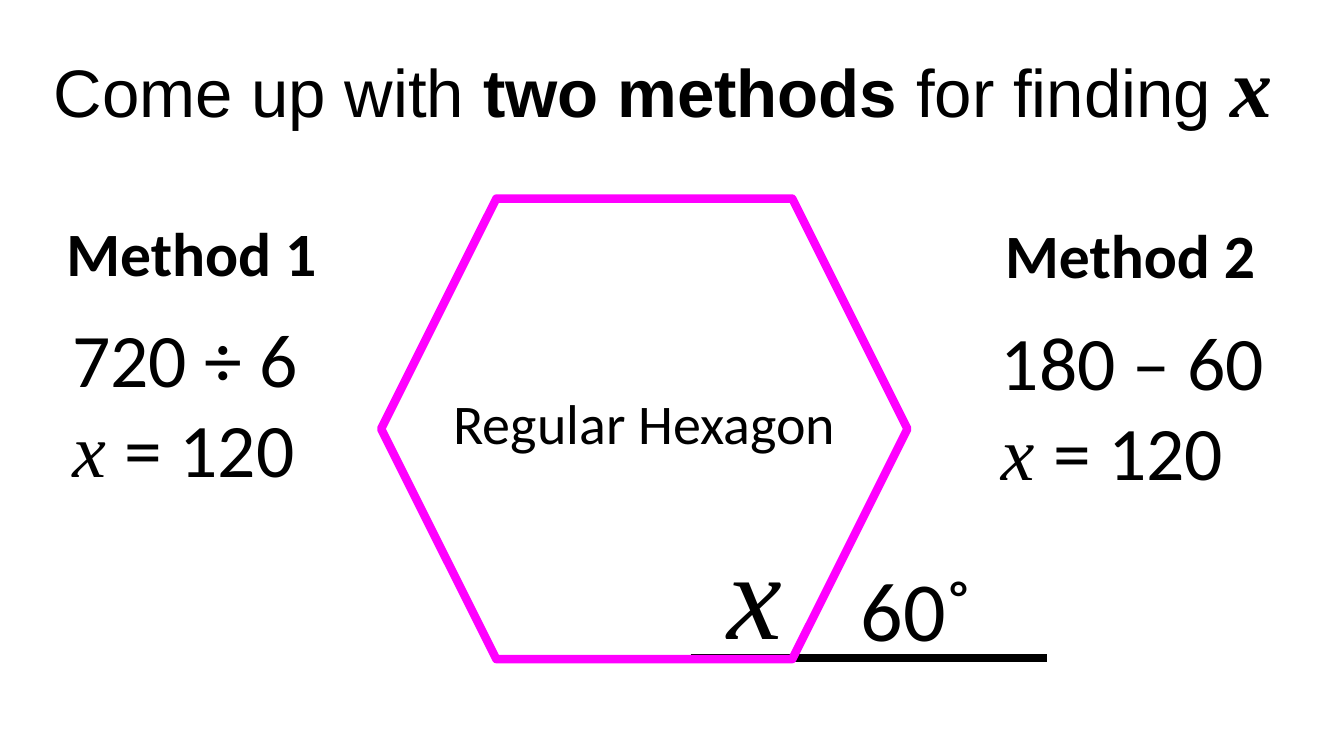
from lxml import etree
from pptx import Presentation
from pptx.dml.color import RGBColor
from pptx.enum.shapes import MSO_CONNECTOR, MSO_SHAPE
from pptx.enum.text import MSO_ANCHOR, MSO_AUTO_SIZE, PP_ALIGN
from pptx.oxml.ns import qn
from pptx.util import Inches, Pt

LEFT, CENTER = PP_ALIGN.LEFT, PP_ALIGN.CENTER
STRAIGHT = MSO_CONNECTOR.STRAIGHT
HEXAGON = MSO_SHAPE.HEXAGON
TOP = MSO_ANCHOR.TOP
NO_AUTOFIT = MSO_AUTO_SIZE.NONE

COLORS = {"ink": "000000", "hexagon": "FF00FF"}
SANS, BODY, MATH = "Arial", "Calibri", "Times New Roman"

# Content: each run is (text, font, size, bold, italic)
TITLE_BOX = (0.26, 0.28, 12.63, 1.11)
TITLE = [[
    ("Come up with ", SANS, 48, False, False),
    ("two methods ", SANS, 48, True, False),
    ("for finding ", SANS, 48, False, False),
    ("x", MATH, 60, True, True),
]]
HEXAGON_BOX = (3.78, 1.97, 5.22, 4.57)
BASELINE = (6.85, 6.53, 10.38, 6.53)
FIGURE_LABELS = [
    ((8.33, 5.48, 1.53, 1.11), ("60˚", BODY, 60, False, False)),
    ((6.75, 5.07, 1.47, 1.58), ("x", MATH, 88, False, True)),
    ((4.35, 3.81, 4.08, 0.77), ("Regular Hexagon", BODY, 40, False, False)),
]
# Heading, heading box, working, working box
METHODS = [
    ("Method 1", (0.26, 2.08, 3.28, 0.84), "720 ÷ 6", (0.62, 3.04, 2.65, 1.92)),
    ("Method 2", (9.57, 2.1, 3.28, 0.84), "180 – 60", (9.83, 3.07, 3, 1.92)),
]
ANSWER = [("x ", MATH, 54, False, True), ("= 120", BODY, 54, False, False)]


def color(name):
    return RGBColor.from_string(COLORS[name])


def write(frame, lines, align):
    frame.word_wrap = True
    frame.auto_size = NO_AUTOFIT
    frame.vertical_anchor = TOP
    frame.text = "\n".join("" for _ in lines)
    for paragraph, runs in zip(frame.paragraphs, lines):
        paragraph.alignment = align
        for text, font, size, bold, italic in runs:
            run = paragraph.add_run()
            run.text = text
            run.font.name = font
            run.font.size = Pt(size)
            run.font.bold = bold
            run.font.italic = italic
            run.font.color.rgb = color("ink")


def add_label(slide, box, lines, align=CENTER):
    label = slide.shapes.add_textbox(*map(Inches, box))
    write(label.text_frame, lines, align)


def main():
    prs = Presentation()
    prs.slide_width, prs.slide_height = Inches(13.33), Inches(7.5)
    slide = prs.slides.add_slide(prs.slide_layouts[5])

    # Title
    title = slide.shapes.title
    title.left, title.top, title.width, title.height = map(Inches, TITLE_BOX)
    write(title.text_frame, TITLE, CENTER)

    # Extended base line, behind the hexagon
    baseline = slide.shapes.add_connector(STRAIGHT, *map(Inches, BASELINE))
    baseline.line.color.rgb = color("ink")
    baseline.line.width = Pt(6)
    etree.SubElement(baseline._element.spPr, qn("a:effectLst"))

    # Hexagon and its labels
    hexagon = slide.shapes.add_shape(HEXAGON, *map(Inches, HEXAGON_BOX))
    hexagon.shadow.inherit = False
    hexagon.fill.background()
    hexagon.line.color.rgb = color("hexagon")
    hexagon.line.width = Pt(6)
    for box, run in FIGURE_LABELS:
        add_label(slide, box, [[run]])

    # The two methods
    for heading, heading_box, working, working_box in METHODS:
        add_label(slide, heading_box, [[(heading, BODY, 44, True, False)]])
        steps = [[(working, BODY, 54, False, False)], ANSWER]
        add_label(slide, working_box, steps, LEFT)

    prs.save("out.pptx")


if __name__ == "__main__":
    main()
